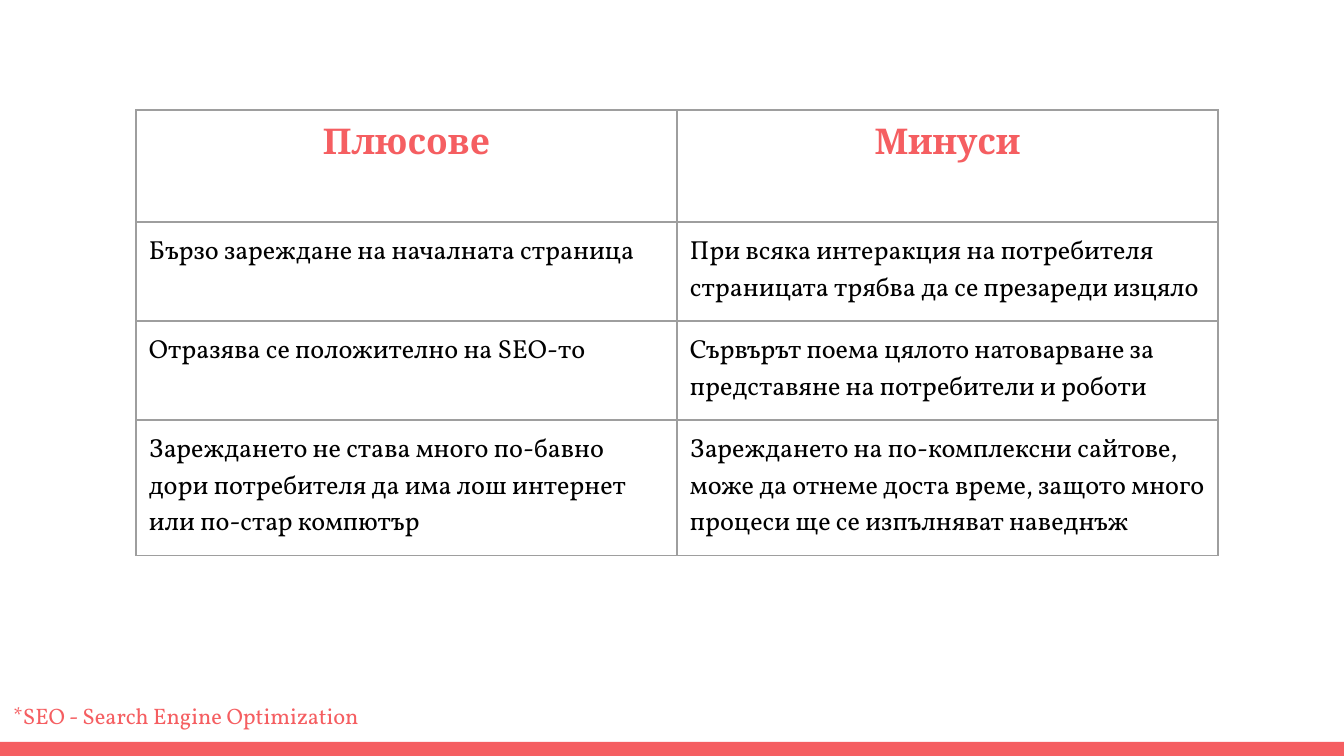
from lxml import etree
from pptx import Presentation
from pptx.dml.color import RGBColor
from pptx.enum.shapes import MSO_SHAPE
from pptx.enum.text import MSO_AUTO_SIZE, PP_ALIGN
from pptx.oxml.ns import qn
from pptx.util import Emu, Pt

RECT = MSO_SHAPE.RECTANGLE
LEFT, CENTER = PP_ALIGN.LEFT, PP_ALIGN.CENTER
GROW = MSO_AUTO_SIZE.SHAPE_TO_FIT_TEXT

WIDTH, HEIGHT = 1344, 756
PAD = 13
CORAL, BLACK, GREY = "F55E61", "000000", "9E9E9E"
HEAD, BODY = "Cambria", "Vollkorn"

ROWS = [
    ("Плюсове", "Минуси"),
    ("Бързо зареждане на началната страница",
     "При всяка интеракция на потребителя страницата трябва да се презареди изцяло"),
    ("Отразява се положително на SEO-то",
     "Сървърът поема цялото натоварване за представяне на потребители и роботи"),
    ("Зареждането не става много по-бавно дори потребителя да има лош интернет "
     "или по-стар компютър",
     "Зареждането на по-комплексни сайтове, може да отнеме доста време, защото "
     "много процеси ще се изпълняват наведнъж"),
]


def px(n):
    return Emu(round(n * 914400 / 134.4))


def rgb(code):
    return RGBColor.from_string(code)


def pad(box):
    """Give a cell or text frame equal margins on all sides."""
    box.margin_left = box.margin_right = px(PAD)
    box.margin_top = box.margin_bottom = px(PAD)


def write(frame, text, size, face, color, bold=False, align=LEFT):
    para = frame.paragraphs[0]
    para.text = text
    para.alignment = align
    font = para.font
    font.size, font.name, font.bold = Pt(size), face, bold
    font.color.rgb = rgb(color)


def border(cell, color, width):
    """Line all four sides; the lines must precede the cell's fill."""
    props = cell._tc.get_or_add_tcPr()
    for i, side in enumerate(("lnL", "lnR", "lnT", "lnB")):
        line = etree.Element(qn(f"a:{side}"), w=str(Pt(width)))
        fill = etree.SubElement(line, qn("a:solidFill"))
        etree.SubElement(fill, qn("a:srgbClr"), val=color)
        props.insert(i, line)


def add_bar(slide, x, y, w, h, color):
    bar = slide.shapes.add_shape(RECT, px(x), px(y), px(w), px(h))
    bar.shadow.inherit = False
    bar.fill.solid()
    bar.fill.fore_color.rgb = rgb(color)
    bar.line.fill.background()


def add_grid(slide, x, y, col, heights, rows):
    cols = len(rows[0])
    table = slide.shapes.add_table(
        len(rows), cols, px(x), px(y), px(col * cols), px(sum(heights))).table
    table.first_row = table.horz_banding = False
    for column in table.columns:
        column.width = px(col)
    for r, texts in enumerate(rows):
        table.rows[r].height = px(heights[r])
        for c, text in enumerate(texts):
            cell = table.cell(r, c)
            pad(cell)
            cell.fill.background()
            border(cell, GREY, 0.75)
            if r == 0:
                write(cell.text_frame, text, 19, HEAD, CORAL, True, CENTER)
            else:
                write(cell.text_frame, text, 14, BODY, BLACK)


def add_note(slide, x, y, w, h, text):
    frame = slide.shapes.add_textbox(px(x), px(y), px(w), px(h)).text_frame
    frame.word_wrap = True
    frame.auto_size = GROW
    pad(frame)
    write(frame, text, 12, BODY, CORAL)


def main():
    deck = Presentation()
    deck.slide_width, deck.slide_height = px(WIDTH), px(HEIGHT)
    slide = deck.slides.add_slide(deck.slide_layouts[6])
    add_bar(slide, 0, 742, WIDTH, 14, CORAL)
    add_grid(slide, 136, 110, 541, [112, 90, 90, 90], ROWS)
    add_note(slide, 0, 689, 876, 54, "*SEO - Search Engine Optimization")
    deck.save("out.pptx")


if __name__ == "__main__":
    main()
